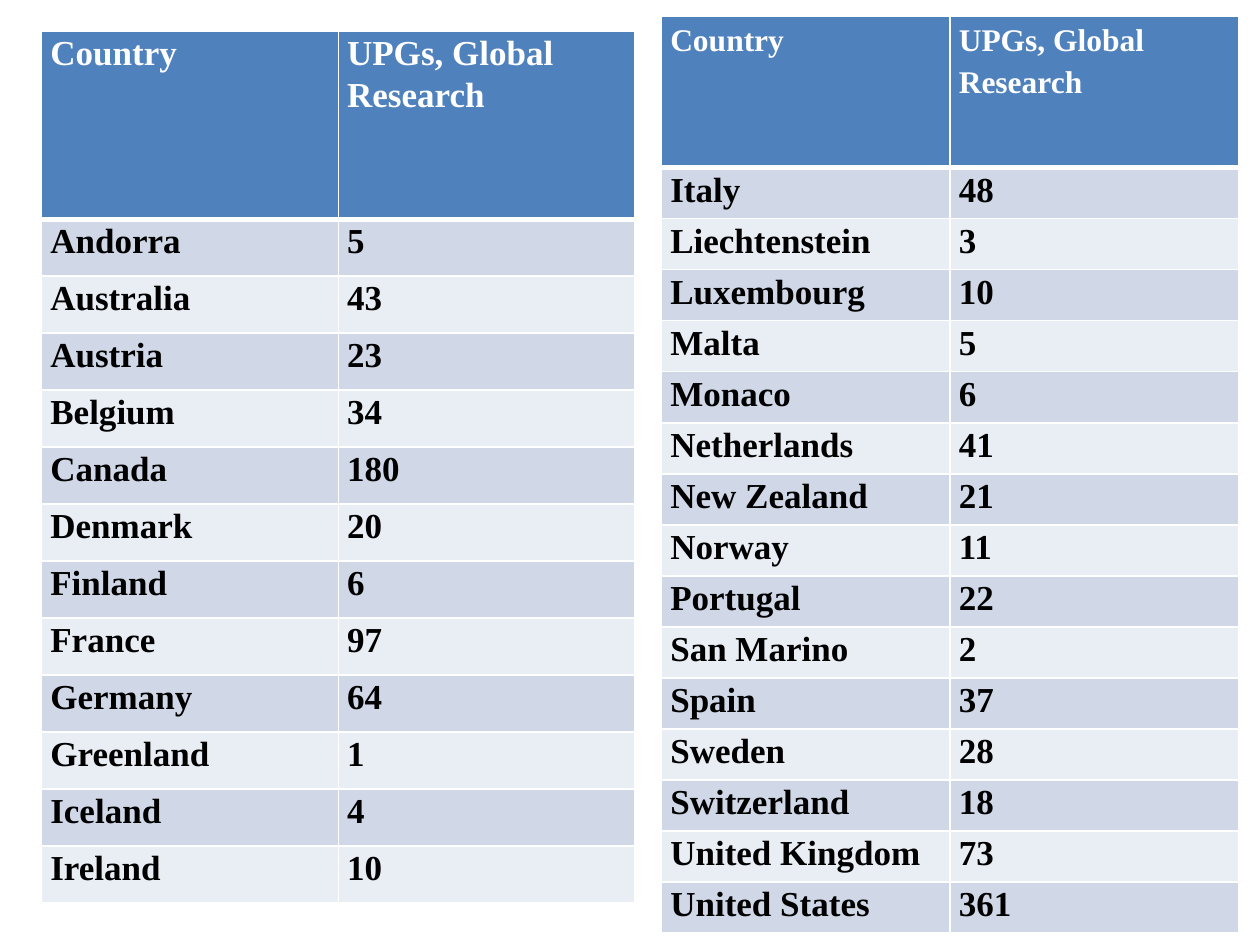
from lxml import etree
from pptx import Presentation
from pptx.dml.color import RGBColor
from pptx.oxml.ns import qn
from pptx.util import Inches, Pt

COLORS = {
    "header": "4F81BD",
    "odd_row": "D0D8E8",
    "even_row": "E9EDF4",
    "white": "FFFFFF",
    "black": "000000",
}
FONT = "Times New Roman"
HEADINGS = ("Country", "UPGs, Global Research")
COUNTRIES_A_TO_I = [
    ("Andorra", 5), ("Australia", 43), ("Austria", 23), ("Belgium", 34),
    ("Canada", 180), ("Denmark", 20), ("Finland", 6), ("France", 97),
    ("Germany", 64), ("Greenland", 1), ("Iceland", 4), ("Ireland", 10),
]
COUNTRIES_I_TO_U = [
    ("Italy", 48), ("Liechtenstein", 3), ("Luxembourg", 10), ("Malta", 5),
    ("Monaco", 6), ("Netherlands", 41), ("New Zealand", 21), ("Norway", 11),
    ("Portugal", 22), ("San Marino", 2), ("Spain", 37), ("Sweden", 28),
    ("Switzerland", 18), ("United Kingdom", 73), ("United States", 361),
]


def set_borders(cell, bottom_width):
    """Draw white cell borders; must run before the cell's fill is set."""
    tc_pr = cell._tc.get_or_add_tcPr()
    for side, width in (("L", 1), ("R", 1), ("T", 1), ("B", bottom_width)):
        ln = etree.SubElement(tc_pr, qn(f"a:ln{side}"), w=str(Pt(width)))
        fill = etree.SubElement(ln, qn("a:solidFill"))
        etree.SubElement(fill, qn("a:srgbClr"), val=COLORS["white"])


def write_cell(cell, text, size, color, fill, bottom_width):
    set_borders(cell, bottom_width)
    cell.fill.solid()
    cell.fill.fore_color.rgb = RGBColor.from_string(COLORS[fill])
    cell.margin_left = cell.margin_right = Inches(0.07)
    cell.margin_top = cell.margin_bottom = 0
    p = cell.text_frame.paragraphs[0]
    p.line_spacing = Pt(24)
    r = p.add_run()
    r.text = str(text)
    r.font.name = FONT
    r.font.size = Pt(size)
    r.font.bold = True
    r.font.color.rgb = RGBColor.from_string(COLORS[color])


def add_country_table(s, box, countries, header_height, header_size):
    """Fill the box: a tall header row, then equal rows sharing the rest."""
    left, top, width, height = box
    rows = [HEADINGS, *countries]
    frame = s.shapes.add_table(len(rows), len(HEADINGS), *map(Inches, box))
    table = frame.table
    for column in table.columns:
        column.width = Inches(width / len(HEADINGS))
    row_height = (height - header_height) / len(countries)
    for i, values in enumerate(rows):
        table.rows[i].height = Inches(row_height if i else header_height)
        if i == 0:
            style = (header_size, "white", "header", 3)
        else:
            style = (20, "black", "odd_row" if i % 2 else "even_row", 1)
        for j, value in enumerate(values):
            write_cell(table.cell(i, j), value, *style)


def main():
    prs = Presentation()
    prs.slide_width, prs.slide_height = Inches(10), Inches(7.5)
    s = prs.slides.add_slide(prs.slide_layouts[6])
    add_country_table(s, (0.33, 0.25, 4.71, 6.92), COUNTRIES_A_TO_I, 1.49, 20)
    add_country_table(s, (5.25, 0.13, 4.58, 7.28), COUNTRIES_I_TO_U, 1.2, 18)
    prs.save("out.pptx")


if __name__ == "__main__":
    main()
